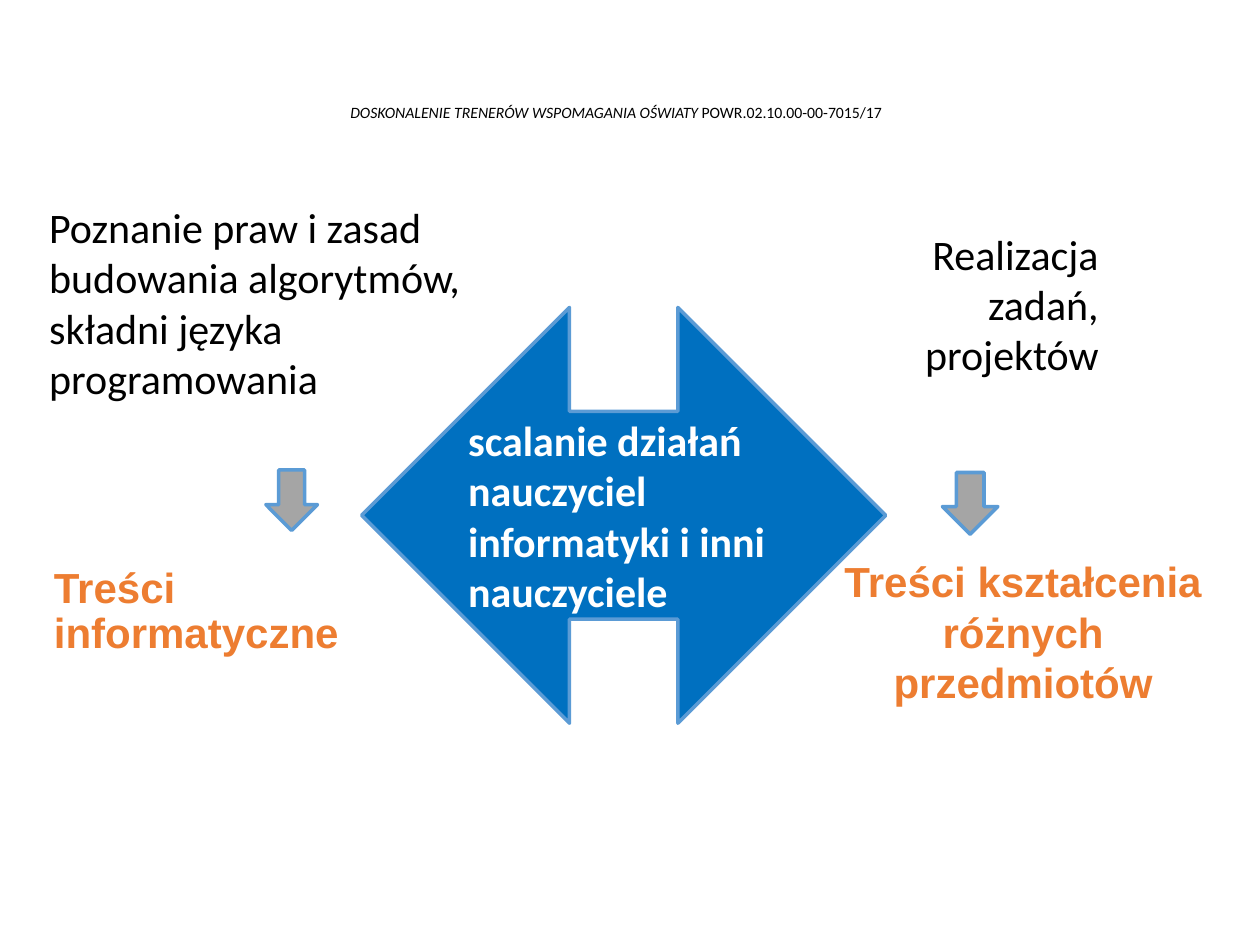
from typing import NamedTuple

from pptx import Presentation
from pptx.dml.color import RGBColor
from pptx.enum.shapes import MSO_SHAPE as Shape
from pptx.enum.text import MSO_ANCHOR as Anchor, PP_ALIGN as Align
from pptx.util import Inches, Pt

BLACK, WHITE, ORANGE = "000000", "FFFFFF", "ED7D31"
GRAY, BLUE, EDGE = "A5A5A5", "0070C0", "5B9BD5"


class Box(NamedTuple):
    left: float
    top: float
    width: float
    height: float


class Run(NamedTuple):
    text: str
    italic: bool = False


class Style(NamedTuple):
    color: str = BLACK
    font: str = "Calibri"
    size: float = 24
    bold: bool = False
    align: Align = Align.LEFT
    inset: float = 0.02
    space: float = 1.0


class Label(NamedTuple):
    box: Box
    text: str
    style: Style


def paint(fill, color: str) -> None:
    fill.solid()
    fill.fore_color.rgb = RGBColor.from_string(color)


def write(frame, paras: list[list[Run]], style: Style) -> None:
    frame.word_wrap = True
    frame.vertical_anchor = Anchor.MIDDLE
    frame.margin_left = frame.margin_right = Inches(style.inset)
    frame.margin_top = frame.margin_bottom = Inches(style.inset)
    for i, runs in enumerate(paras):
        para = frame.add_paragraph() if i else frame.paragraphs[0]
        para.alignment = style.align
        para.line_spacing = style.space
        for part in runs:
            run = para.add_run()
            run.text = part.text
            font = run.font
            font.name, font.size = style.font, Pt(style.size)
            font.bold, font.italic = style.bold, part.italic
            paint(font.fill, style.color)


def add_text(slide, box: Box, paras: list[list[Run]], style: Style):
    frame = slide.shapes.add_textbox(*map(Inches, box)).text_frame
    write(frame, paras, style)
    return frame


def add_arrow(slide, kind: Shape, box: Box, color: str):
    arrow = slide.shapes.add_shape(kind, *map(Inches, box))
    arrow.shadow.inherit = False
    paint(arrow.fill, color)
    paint(arrow.line.fill, EDGE)
    arrow.line.width = Pt(2)
    return arrow


HEAD = Style(size=9, align=Align.CENTER, inset=0.1, space=0.9)
TOPIC = Style(ORANGE, "Arial", bold=True, inset=0.1, space=0.9)
LABELS = [
    Label(Box(0.33, 4.21, 3.2, 1.3), "Treści informatyczne", TOPIC),
    Label(Box(0.37, 1.57, 4.08, 1.66),
          "Poznanie praw i zasad budowania algorytmów, składni języka programowania",
          Style()),
    Label(Box(6.93, 1.78, 1.81, 1.26), "Realizacja zadań, projektów",
          Style(align=Align.RIGHT)),
    Label(Box(6.37, 4.09, 3.5, 1.84), "Treści kształcenia różnych przedmiotów",
          TOPIC._replace(align=Align.CENTER, inset=0.05, space=1.0)),
]
DOWN = [Box(2.11, 3.73, 0.41, 0.48), Box(7.48, 3.75, 0.44, 0.49)]
MERGE = ["scalanie działań", "nauczyciel informatyki i inni nauczyciele"]


def main() -> None:
    deck = Presentation()
    deck.slide_width, deck.slide_height = Inches(10), Inches(7.5)
    slide = deck.slides.add_slide(deck.slide_layouts[6])

    head = add_text(slide, Box(0.59, 0.46, 8.6, 1.22), [[
        Run("DOSKONALENIE TRENERÓW WSPOMAGANIA OŚWIATY ", italic=True),
        Run("POWR.02.10.00-00-7015/17"),
    ]], HEAD)
    head.vertical_anchor = Anchor.TOP
    head.margin_top = Inches(0.71)

    for label in LABELS:
        add_text(slide, label.box, [[Run(label.text)]], label.style)
    for box in DOWN:
        add_arrow(slide, Shape.DOWN_ARROW, box, GRAY)
    merge = add_arrow(slide, Shape.LEFT_RIGHT_ARROW, Box(2.87, 2.44, 4.16, 3.3), BLUE)
    write(merge.text_frame, [[Run(text)] for text in MERGE], Style(WHITE, bold=True))

    deck.save("out.pptx")


if __name__ == "__main__":
    main()
